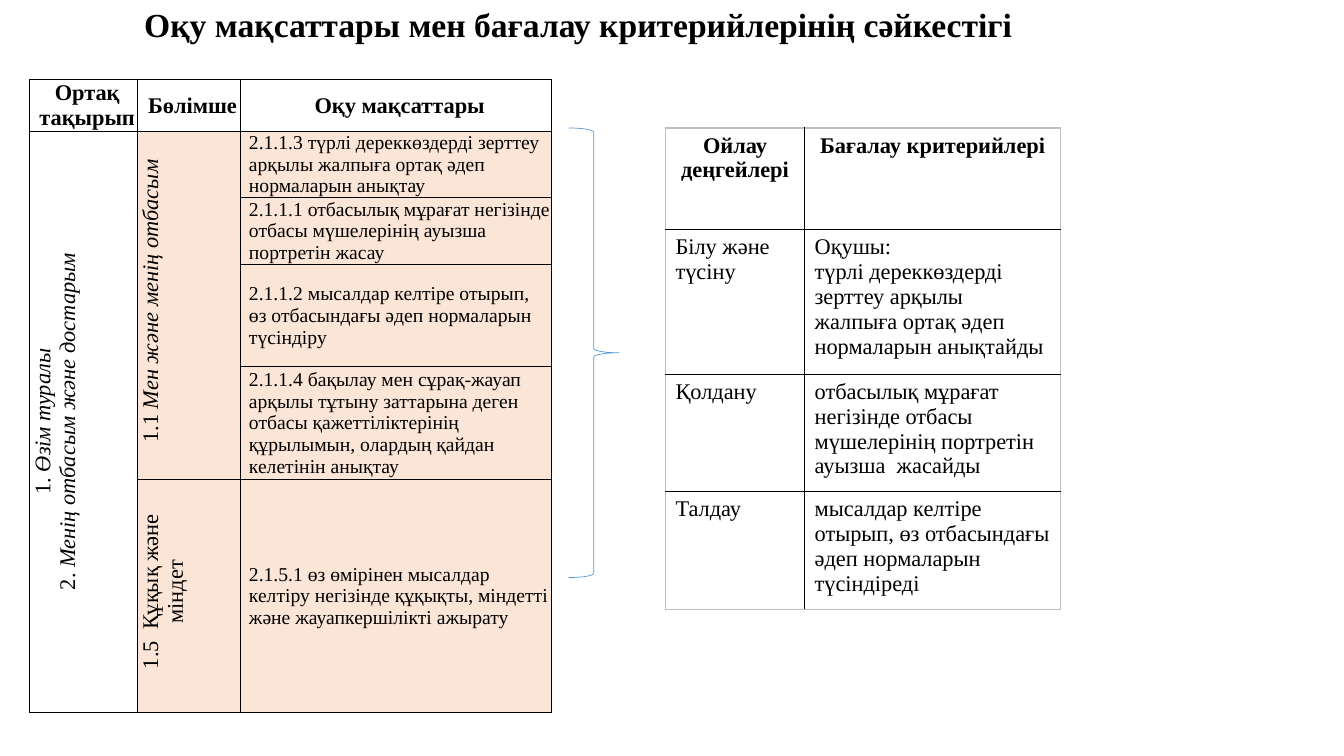
import pptx
import pptx.dml.color
import pptx.enum.shapes
import pptx.enum.text
import pptx.oxml
import pptx.util
from pptx.util import Inches

FONT = "Times New Roman"
BLACK, WHITE, PEACH, GREY, BLUE = "000000", "FFFFFF", "FBE5D6", "BFBFBF", "5B9BD5"
CENTER = pptx.enum.text.PP_ALIGN.CENTER
LEFT = pptx.enum.text.PP_ALIGN.LEFT
MIDDLE = pptx.enum.text.MSO_ANCHOR.MIDDLE

TITLE = "Оқу мақсаттары мен бағалау критерийлерінің сәйкестігі"

# Each paragraph is a list of (text, italic) spans.
GOAL_HEADS = ["Ортақ тақырып", "Бөлімше", "Оқу мақсаттары"]
TOPICS = [
    [("1. ", False), ("Өзім туралы", True)],
    [("2. ", False), ("Менің отбасым және достарым", True)],
]
SECTION_FAMILY = [[("1.1 ", False), ("Мен және менің отбасым", True)]]
SECTION_RIGHTS = [[("1.5  Құқық және міндет", False)]]
GOALS = [
    "2.1.1.3 түрлі дереккөздерді зерттеу арқылы жалпыға ортақ әдеп нормаларын анықтау",
    "2.1.1.1 отбасылық мұрағат негізінде отбасы мүшелерінің ауызша портретін жасау",
    "2.1.1.2 мысалдар келтіре отырып, өз отбасындағы әдеп нормаларын түсіндіру",
    "2.1.1.4 бақылау мен сұрақ-жауап арқылы тұтыну заттарына деген отбасы "
    "қажеттіліктерінің құрылымын, олардың қайдан келетінін анықтау",
    "2.1.5.1 өз өмірінен мысалдар келтіру негізінде құқықты, міндетті және "
    "жауапкершілікті ажырату",
]
CRITERIA = [
    ("Ойлау деңгейлері", ["Бағалау критерийлері"]),
    ("Білу және түсіну", [
        "Оқушы:",
        "түрлі дереккөздерді зерттеу арқылы жалпыға ортақ әдеп нормаларын анықтайды"]),
    ("Қолдану", ["отбасылық мұрағат негізінде отбасы мүшелерінің портретін ауызша  жасайды"]),
    ("Талдау", ["мысалдар келтіре отырып, өз отбасындағы әдеп нормаларын түсіндіреді"]),
]

GOAL_COLS = [1.07, 1.02, 3.09]
GOAL_ROWS = [0.51, 0.64, 0.67, 1.01, 1.12, 2.31]
CRITERIA_COLS = [1.38, 2.54]
CRITERIA_ROWS = [1.01, 1.42, 1.09, 1.09]


def color(hex_code):
    return pptx.dml.color.RGBColor.from_string(hex_code)


def plain(*lines):
    return [[(line, False)] for line in lines]


def write(frame, paragraphs, size=16, bold=False, align=LEFT, indent=0, spacing=None):
    """Fill a text frame with paragraphs of (text, italic) spans."""
    frame.word_wrap = True
    for number, spans in enumerate(paragraphs):
        para = frame.add_paragraph() if number else frame.paragraphs[0]
        para.alignment = align
        para.line_spacing = spacing
        if indent:
            properties = para._p.get_or_add_pPr()
            properties.set("marL", str(Inches(indent)))
            properties.set("indent", "0")
        for text, italic in spans:
            span = para.add_run()
            span.text = text
            span.font.name = FONT
            span.font.size = pptx.util.Pt(size)
            span.font.bold = bold
            span.font.italic = italic
            span.font.color.rgb = color(BLACK)


def add_grid(page, left, top, widths, heights, line_width, edge):
    """Add an unfilled table with black inner lines and the given edge colour."""
    rows, cols = len(heights), len(widths)
    table = page.shapes.add_table(
        rows, cols, Inches(left), Inches(top),
        Inches(sum(widths)), Inches(sum(heights))).table
    table.first_row = table.horz_banding = False
    for column, width in zip(table.columns, widths):
        column.width = Inches(width)
    for row, height in zip(table.rows, heights):
        row.height = Inches(height)
    for r in range(rows):
        for c in range(cols):
            cell = table.cell(r, c)
            outer = {"L": c == 0, "R": c == cols - 1, "T": r == 0, "B": r == rows - 1}
            for side, is_outer in outer.items():
                cell._tc.get_or_add_tcPr().append(pptx.oxml.parse_xml(
                    f'<a:ln{side} xmlns:a="http://schemas.openxmlformats.org/drawingml/2006/main"'
                    f' w="{pptx.util.Pt(line_width)}"><a:solidFill>'
                    f'<a:srgbClr val="{edge if is_outer else BLACK}"/>'
                    f'</a:solidFill></a:ln{side}>'))
            cell.fill.background()
    return table


def add_goals(page):
    table = add_grid(page, 0.29, 0.79, GOAL_COLS, GOAL_ROWS, 0.5, BLACK)
    for r in range(len(GOAL_ROWS)):
        for c in range(len(GOAL_COLS)):
            cell = table.cell(r, c)
            cell.margin_left = cell.margin_right = cell.margin_top = Inches(0.01)
            cell.margin_bottom = 0
            cell.vertical_anchor = MIDDLE
            cell.fill.solid()
            cell.fill.fore_color.rgb = color(PEACH if r and c else WHITE)
    for c, head in enumerate(GOAL_HEADS):
        write(table.cell(0, c).text_frame, plain(head), bold=True, align=CENTER, indent=0.08)
    for r, goal in enumerate(GOALS, start=1):
        write(table.cell(r, 2).text_frame, plain(goal), size=14, indent=0.08)

    table.cell(1, 0).merge(table.cell(5, 0))
    table.cell(1, 1).merge(table.cell(4, 1))
    for r, c, paragraphs, indent in [
            (1, 0, TOPICS, 0), (1, 1, SECTION_FAMILY, 0.08), (5, 1, SECTION_RIGHTS, 0.08)]:
        cell = table.cell(r, c)
        cell._tc.get_or_add_tcPr().set("vert", "vert270")
        write(cell.text_frame, paragraphs, align=CENTER, indent=indent)


def add_criteria(page):
    table = add_grid(page, 6.6, 1.27, CRITERIA_COLS, CRITERIA_ROWS, 1, GREY)
    for r, (level, lines) in enumerate(CRITERIA):
        head = r == 0
        for c, paragraphs in enumerate([plain(level), plain(*lines)]):
            write(table.cell(r, c).text_frame, paragraphs,
                  bold=head, align=CENTER if head else LEFT)


def main():
    deck = pptx.Presentation()
    deck.slide_width, deck.slide_height = Inches(13.33), Inches(7.5)
    page = deck.slides.add_slide(deck.slide_layouts[6])

    add_goals(page)
    title = page.shapes.add_textbox(Inches(0.15), Inches(0.04), Inches(11.17), Inches(0.45))
    title.text_frame.vertical_anchor = MIDDLE
    write(title.text_frame, plain(TITLE), size=24, bold=True, align=CENTER, spacing=0.9)
    add_criteria(page)

    brace = page.shapes.add_shape(
        pptx.enum.shapes.MSO_SHAPE.RIGHT_BRACE,
        Inches(5.64), Inches(1.27), Inches(0.5), Inches(4.46))
    brace.shadow.inherit = False
    brace.fill.background()
    brace.line.color.rgb = color(BLUE)
    brace.line.width = pptx.util.Pt(0.5)

    deck.save("out.pptx")


if __name__ == "__main__":
    main()
